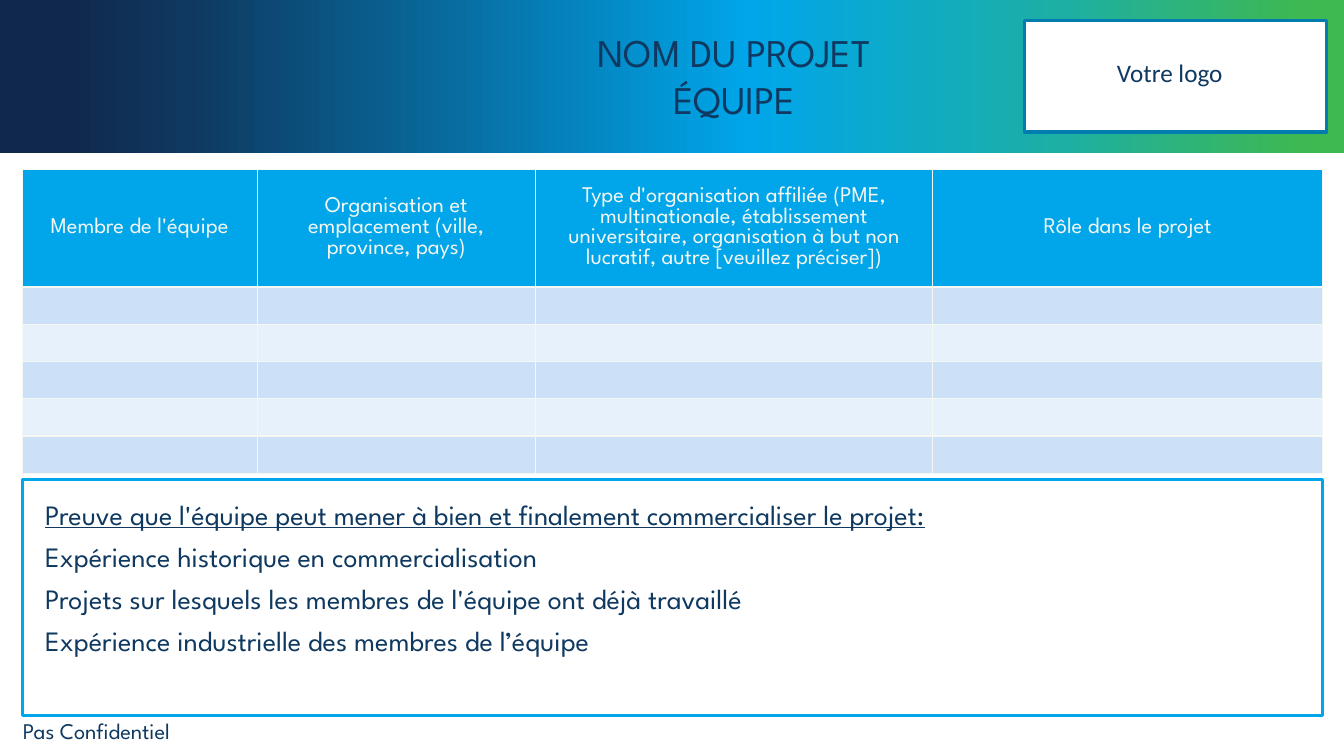
import pptx
import pptx.util
import pptx.dml.color
import pptx.enum.shapes
import pptx.enum.text
from dataclasses import dataclass
from lxml import etree
from pptx.util import Inches, Pt

ALIGN = pptx.enum.text.PP_ALIGN
NS = "http://schemas.openxmlformats.org/drawingml/2006/main"


@dataclass(frozen=True)
class Theme:
    navy: str = "0F3960"
    blue: str = "00A6E9"
    edge: str = "007CAF"
    white: str = "FFFFFF"
    pale: str = "F5F7F3"
    bands: tuple = ("CCE1F7", "E7F1FB")
    stops: tuple = ((5, "10284C"), (14, "0F3960"), (56, "00A6E9"),
                    (79, "1DAFA4"), (97, "3EB851"))
    font: str = "League Spartan"
    plain: str = "Calibri"
    title: int = 28
    body: int = 20
    logo: int = 18
    small: int = 16


THEME = Theme()
HEADS = ("Membre de l'équipe",
         "Organisation et emplacement (ville, province, pays)",
         "Type d'organisation affiliée (PME, multinationale, établissement "
         "universitaire, organisation à but non lucratif, autre "
         "[veuillez préciser])",
         "Rôle dans le projet")
PROOF = ("Preuve que l'équipe peut mener à bien et finalement "
         "commercialiser le projet:",
         "Expérience historique en commercialisation",
         "Projets sur lesquels les membres de l'équipe ont déjà travaillé",
         "Expérience industrielle des membres de l’équipe")
WIDTHS = (2.33, 2.76, 3.94, 3.87)
HEAD_H, ROW_H, ROWS = 1.16, 0.37, 5


def rgb(code):
    return pptx.dml.color.RGBColor.from_string(code)


def style(para, size, color=THEME.navy, font=THEME.font, align=None):
    para.font.size = Pt(size)
    para.font.name = font
    para.font.color.rgb = rgb(color)
    para.alignment = align


def add_box(slide, area, fill=None, line=None):
    kind = pptx.enum.shapes.MSO_SHAPE.RECTANGLE
    box = slide.shapes.add_shape(kind, *map(Inches, area))
    box.shadow.inherit = False
    if fill:
        box.fill.solid()
        box.fill.fore_color.rgb = rgb(fill)
    else:
        box.fill.background()
    if line:
        box.line.color.rgb = rgb(line)
        box.line.width = Pt(2.25)
    else:
        box.line.fill.background()
    return box


def add_text(slide, area, lines, size, align=None, after=None, wrap=True,
             font=THEME.font):
    frame = slide.shapes.add_textbox(*map(Inches, area)).text_frame
    frame.word_wrap = wrap
    frame.text = "\n".join(lines)
    for para in frame.paragraphs:
        style(para, size, font=font, align=align)
        if after:
            para.space_after = Pt(after)
    return frame


def add_banner(slide):
    fill = add_box(slide, (0, 0, 13.33, 1.52)).fill
    fill.gradient()
    fill.gradient_angle = 0
    stops = fill.gradient_stops
    # The default gradient has two stops; rebuild its list
    group = fill._fill._gradFill.find(f"{{{NS}}}gsLst")
    for stop in list(group):
        group.remove(stop)
    for place, color in THEME.stops:
        stop = etree.SubElement(group, f"{{{NS}}}gs", pos=str(place * 1000))
        etree.SubElement(stop, f"{{{NS}}}srgbClr", val=color)


def set_edges(cell, base):
    props = cell._tc.get_or_add_tcPr()
    for spot, (side, width) in enumerate(
            (("lnL", 1), ("lnR", 1), ("lnT", 1), ("lnB", base))):
        line = etree.Element(f"{{{NS}}}{side}", w=str(Pt(width)))
        fill = etree.SubElement(line, f"{{{NS}}}solidFill")
        etree.SubElement(fill, f"{{{NS}}}srgbClr", val=THEME.pale)
        props.insert(spot, line)


def add_team(slide):
    area = (0.22, 1.68, sum(WIDTHS), HEAD_H + ROWS * ROW_H)
    table = slide.shapes.add_table(
        ROWS + 1, len(WIDTHS), *map(Inches, area)).table
    for col, width in zip(table.columns, WIDTHS):
        col.width = Inches(width)
    for r, row in enumerate(table.rows):
        row.height = Inches(ROW_H if r else HEAD_H)
        for c, cell in enumerate(row.cells):
            cell.fill.solid()
            tint = THEME.bands[(r - 1) % 2] if r else THEME.blue
            cell.fill.fore_color.rgb = rgb(tint)
            set_edges(cell, 1)
            if r:
                cell.margin_top = cell.margin_bottom = Inches(0.02)
                continue
            cell.text = HEADS[c]
            cell.vertical_anchor = pptx.enum.text.MSO_ANCHOR.MIDDLE
            style(cell.text_frame.paragraphs[0], THEME.small, THEME.pale,
                  align=ALIGN.CENTER)


def main():
    deck = pptx.Presentation()
    deck.slide_width, deck.slide_height = Inches(13.33), Inches(7.5)
    slide = deck.slides.add_slide(deck.slide_layouts[6])

    # Banner with title and logo space
    add_banner(slide)
    add_box(slide, (10.16, 0.2, 3, 1.11), THEME.white, THEME.edge)
    add_text(slide, (10.98, 0.52, 1.26, 0.4), ["Votre logo"], THEME.logo,
             wrap=False, font=THEME.plain)
    add_text(slide, (5.02, 0.23, 4.52, 1.04), ["NOM DU PROJET", "ÉQUIPE"],
             THEME.title, ALIGN.CENTER)

    # Team table
    add_team(slide)

    # Proof of ability
    add_box(slide, (0.22, 4.76, 12.9, 2.34), line=THEME.blue)
    proof = add_text(slide, (0.35, 4.89, 12.6, 1.7), PROOF, THEME.body,
                     ALIGN.JUSTIFY, after=6)
    proof.paragraphs[0].font.underline = True

    # Footer
    add_text(slide, (0.13, 7.07, 2.06, 0.37), ["Pas Confidentiel"],
             THEME.small)
    deck.save("out.pptx")


if __name__ == "__main__":
    main()
